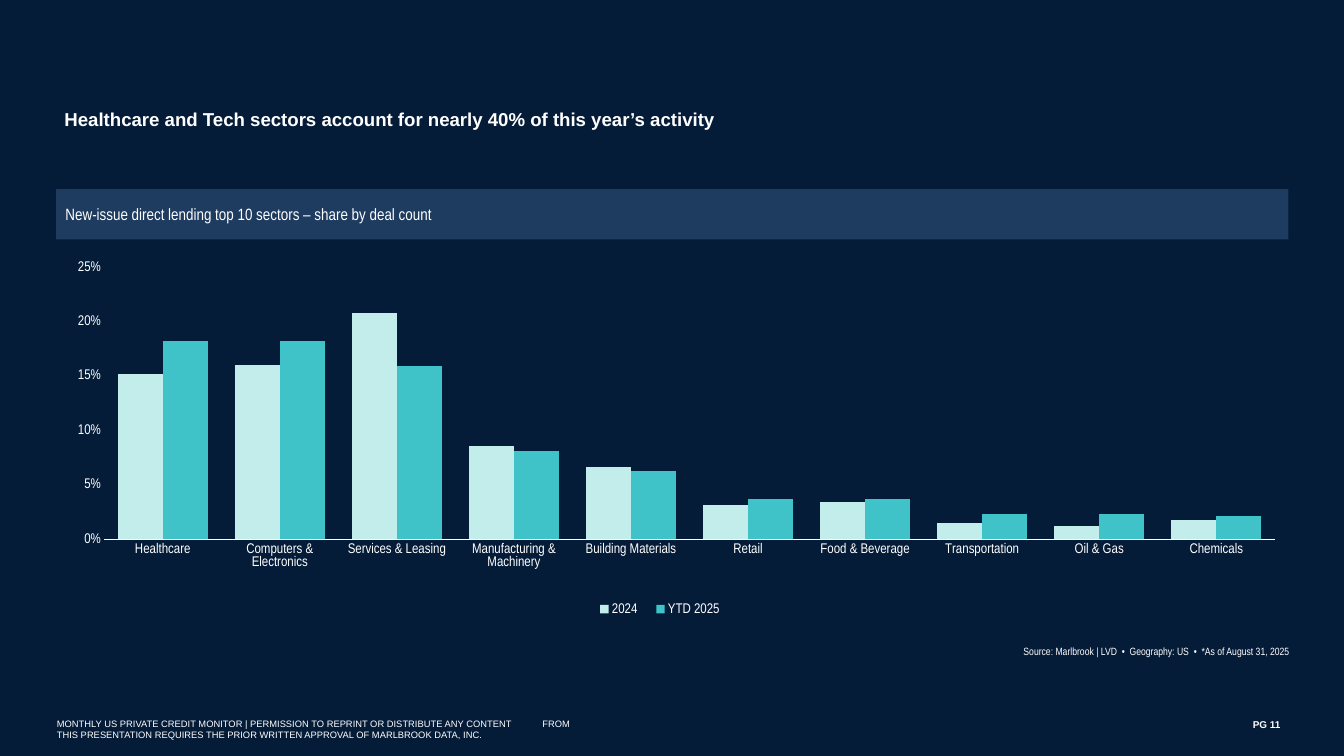
from lxml import etree
from pptx import Presentation
from pptx.chart.data import CategoryChartData
from pptx.dml.color import RGBColor
from pptx.enum.chart import XL_CHART_TYPE, XL_LEGEND_POSITION, XL_TICK_MARK
from pptx.enum.shapes import MSO_SHAPE
from pptx.enum.text import MSO_ANCHOR, MSO_AUTO_SIZE, PP_ALIGN
from pptx.oxml.ns import qn
from pptx.util import Cm, Pt

COLUMNS = XL_CHART_TYPE.COLUMN_CLUSTERED
BOTTOM = XL_LEGEND_POSITION.BOTTOM
NO_TICK = XL_TICK_MARK.NONE
RECTANGLE = MSO_SHAPE.RECTANGLE
TOP, MIDDLE = MSO_ANCHOR.TOP, MSO_ANCHOR.MIDDLE
GROW, FIXED = MSO_AUTO_SIZE.SHAPE_TO_FIT_TEXT, MSO_AUTO_SIZE.NONE
LEFT, RIGHT = PP_ALIGN.LEFT, PP_ALIGN.RIGHT

COLORS = {
    "navy": "051C38",
    "banner": "1E3B60",
    "white": "FFFFFF",
    "pale": "C3EDEB",
    "teal": "40C2C9",
}

SECTORS = [
    ("Healthcare", 0.152, 0.182),
    ("Computers & Electronics", 0.16, 0.182),
    ("Services & Leasing", 0.208, 0.159),
    ("Manufacturing & Machinery", 0.086, 0.081),
    ("Building Materials", 0.066, 0.063),
    ("Retail", 0.031, 0.037),
    ("Food & Beverage", 0.034, 0.037),
    ("Transportation", 0.015, 0.023),
    ("Oil & Gas", 0.012, 0.023),
    ("Chemicals", 0.018, 0.021),
]
PERIODS = [("2024", "pale"), ("YTD 2025", "teal")]
PLOT_LAYOUT = {
    "layoutTarget": "inner",
    "xMode": "edge",
    "yMode": "edge",
    "x": 0.039,
    "y": 0.04,
    "w": 0.95,
    "h": 0.72,
}
LEGEND_LAYOUT = {
    "xMode": "edge",
    "yMode": "edge",
    "x": 0.43,
    "y": 0.91,
    "w": 0.12,
    "h": 0.07,
}


def color(name):
    return RGBColor.from_string(COLORS[name])


def set_values(target, values):
    for name, value in values.items():
        setattr(target, name, value)


def paint(fill, name):
    fill.solid()
    fill.fore_color.rgb = color(name)


def format_font(font, name, size, bold=False):
    set_values(font, {"name": name, "size": Pt(size), "bold": bold})
    font.color.rgb = color("white")


def add_text(page, area, text, font, size, bold=False, align=LEFT,
             anchor=TOP, fit=GROW, tab=None):
    box = page.shapes.add_textbox(*map(Cm, area))
    frame = box.text_frame
    set_values(frame, {"word_wrap": True, "auto_size": fit, "vertical_anchor": anchor})
    para = frame.paragraphs[0]
    para.alignment = align
    if tab:
        stops = etree.SubElement(para._p.get_or_add_pPr(), qn("a:tabLst"))
        etree.SubElement(stops, qn("a:tab"), pos=str(Cm(tab)), algn="l")
    span = para.add_run()
    span.text = text
    format_font(span.font, font, size, bold)


def add_banner(page, area):
    banner = page.shapes.add_shape(RECTANGLE, *map(Cm, area))
    banner.shadow.inherit = False
    paint(banner.fill, "banner")
    banner.line.fill.background()


def format_axes(chart):
    for axis in (chart.category_axis, chart.value_axis):
        set_values(axis, {
            "major_tick_mark": NO_TICK,
            "minor_tick_mark": NO_TICK,
            "has_major_gridlines": False,
        })
        format_font(axis.tick_labels.font, "Arial Narrow", 12)
    line = chart.category_axis.format.line
    line.color.rgb = color("white")
    line.width = Pt(0.75)
    values = chart.value_axis
    values.format.line.fill.background()
    set_values(values, {"minimum_scale": 0, "maximum_scale": 0.25, "major_unit": 0.05})
    set_values(values.tick_labels, {"number_format": "0%", "number_format_is_linked": False})


def place_part(part, position, values):
    for old in part.findall(qn("c:layout")):
        part.remove(old)
    layout = etree.Element(qn("c:layout"))
    manual = etree.SubElement(layout, qn("c:manualLayout"))
    for name, value in values.items():
        etree.SubElement(manual, qn(f"c:{name}"), val=str(value))
    part.insert(position, layout)


def add_sector_chart(page, area):
    sectors, *shares = zip(*SECTORS)
    data = CategoryChartData(number_format="0.0%")
    data.categories = sectors
    for (period, _), values in zip(PERIODS, shares):
        data.add_series(period, values)
    chart = page.shapes.add_chart(COLUMNS, *map(Cm, area), data).chart
    format_font(chart.font, "Calibri", 10)
    set_values(chart, {"has_title": False, "has_legend": True})
    set_values(chart.legend, {"position": BOTTOM, "include_in_layout": False})
    format_font(chart.legend.font, "Arial Narrow", 12)
    plot = chart.plots[0]
    set_values(plot, {"gap_width": 60, "overlap": 0, "vary_by_categories": False})
    for series, (_, tone) in zip(plot.series, PERIODS):
        paint(series.format.fill, tone)
    format_axes(chart)
    chart_parts = chart._chartSpace.chart
    place_part(chart_parts.plotArea, 0, PLOT_LAYOUT)
    place_part(chart_parts.find(qn("c:legend")), 1, LEGEND_LAYOUT)


def main():
    deck = Presentation()
    set_values(deck, {"slide_width": Cm(40.64), "slide_height": Cm(22.86)})
    page = deck.slides.add_slide(deck.slide_layouts[6])
    paint(page.background.fill, "navy")

    add_text(page, (34.93, 21.59, 4.04, 0.61), "PG 11", "Arial", 8.5, bold=True, align=RIGHT)
    add_banner(page, (1.7, 5.72, 37.26, 1.52))
    add_text(page, (1.47, 21.59, 16.08, 0.94),
             "MONTHLY US PRIVATE CREDIT MONITOR | PERMISSION TO REPRINT OR DISTRIBUTE "
             "ANY CONTENT\tFROM THIS PRESENTATION REQUIRES THE PRIOR WRITTEN APPROVAL "
             "OF MARLBROOK DATA, INC.", "Arial", 8, tab=14.68)
    add_text(page, (1.7, 3.15, 37.26, 2.54),
             "Healthcare and Tech sectors account for nearly 40% of this year’s activity",
             "Arial", 16, bold=True, fit=FIXED)
    add_text(page, (27.72, 19.38, 11.51, 0.64),
             "Source: Marlbrook | LVD  •  Geography: US  •  *As of August 31, 2025",
             "Arial Narrow", 9, align=RIGHT)
    add_text(page, (1.73, 5.72, 37.21, 1.52),
             "New-issue direct lending top 10 sectors – share by deal count",
             "Arial Narrow", 14, anchor=MIDDLE, fit=FIXED)
    add_sector_chart(page, (1.7, 7.62, 37.26, 11.43))
    deck.save("out.pptx")


if __name__ == "__main__":
    main()
